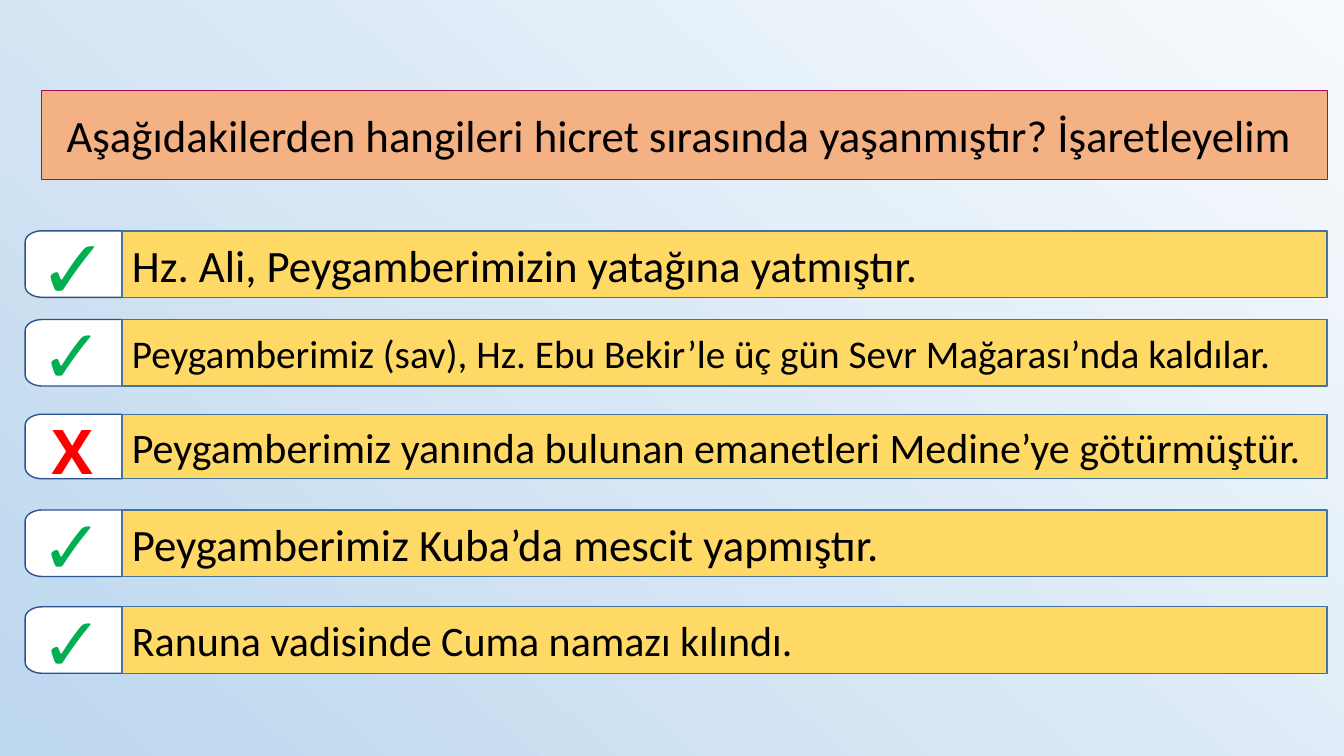
import math

import pptx
import pptx.dml.color
import pptx.enum.shapes
import pptx.enum.text
import pptx.util

Inches = pptx.util.Inches
ANCHOR = pptx.enum.text.MSO_ANCHOR
ALIGN = pptx.enum.text.PP_ALIGN


def paint(shape, fill, line):
    shape.shadow.inherit = False
    shape.fill.solid()
    shape.fill.fore_color.rgb = pptx.dml.color.RGBColor.from_string(fill)
    shape.line.color.rgb = pptx.dml.color.RGBColor.from_string(line)
    shape.line.width = pptx.util.Pt(1)


def write(shape, text, size, font, color, align, anchor, bold=False):
    frame = shape.text_frame
    frame.vertical_anchor = anchor
    para = frame.paragraphs[0]
    para.alignment = align
    span = para.add_run()
    span.text = text
    span.font.size = pptx.util.Pt(size)
    span.font.name = font
    span.font.bold = bold
    span.font.color.rgb = pptx.dml.color.RGBColor.from_string(color)


deck = pptx.Presentation()
deck.slide_width = Inches(13.33)
deck.slide_height = Inches(7.5)
page = deck.slides.add_slide(deck.slide_layouts[5])  # Title Only

backdrop = page.background.fill
backdrop.gradient()
backdrop.gradient_angle = 230
for stop, color in zip(backdrop.gradient_stops, ("F7FAFD", "BDD7EE")):
    stop.color.rgb = pptx.dml.color.RGBColor.from_string(color)

title = page.shapes.title
title.left, title.top = Inches(0.41), Inches(0.9)
title.width, title.height = Inches(12.76), Inches(0.88)
paint(title, "F4B183", "A90C5D")
title.text_frame.word_wrap = True
title.text_frame.auto_size = pptx.enum.text.MSO_AUTO_SIZE.NONE
write(title, "Aşağıdakilerden hangileri hicret sırasında yaşanmıştır? İşaretleyelim ",
      32, "Calibri", "000000", ALIGN.CENTER, ANCHOR.MIDDLE)

# Marks: symbol, size, font, colour, left, rise above the row, width, height, wrap
BIG_TICK = ("✓", 60, "Roboto Slab", "00B050", 0.02, 0.2, 1.43, 1.11, True)
TICK = ("✓", 54, "Roboto Slab", "00B050", 0, 0.16, 1.43, 1.01, True)
CROSS = ("X", 44, "Open Sans", "FF0000", 0.41, 0.06, 0.61, 0.84, False)

# Answers: top, height, text size, text, mark
ANSWERS = [
    (2.29, 0.66, 32, "Hz. Ali, Peygamberimizin yatağına yatmıştır.", BIG_TICK),
    (3.17, 0.66, 28, "Peygamberimiz (sav), Hz. Ebu Bekir’le üç gün Sevr Mağarası’nda kaldılar.", TICK),
    (4.11, 0.64, 30, "Peygamberimiz yanında bulunan emanetleri Medine’ye götürmüştür.", CROSS),
    (5.06, 0.66, 32, "Peygamberimiz Kuba’da mescit yapmıştır.", TICK),
    (6.02, 0.66, 30, "Ranuna vadisinde Cuma namazı kılındı.", TICK),
]
TAB_LEFT, BAR_LEFT, BAR_WIDTH = 0.25, 1.21, 11.95
CORNER_X, CORNER_Y = 0.17, 0.11

for top, height, size, answer, mark in ANSWERS:
    row = page.shapes.add_group_shape()

    # Tab with square right corners and elliptical left corners
    outline = [(BAR_LEFT, top + height)]
    for first_angle, center_y in ((90, top + height - CORNER_Y), (180, top + CORNER_Y)):
        for angle in range(first_angle, first_angle + 91, 10):
            turn = math.radians(angle)
            outline.append((TAB_LEFT + CORNER_X + CORNER_X * math.cos(turn),
                            center_y + CORNER_Y * math.sin(turn)))
    builder = row.shapes.build_freeform(Inches(BAR_LEFT), Inches(top))
    builder.add_line_segments([(Inches(x), Inches(y)) for x, y in outline], close=True)
    paint(builder.convert_to_shape(), "FFFFFF", "2F528F")

    bar = row.shapes.add_shape(pptx.enum.shapes.MSO_SHAPE.RECTANGLE, Inches(BAR_LEFT),
                               Inches(top), Inches(BAR_WIDTH), Inches(height))
    paint(bar, "FFD966", "43739E")
    bar.text_frame.word_wrap = True
    write(bar, answer, size, "Calibri", "000000", ALIGN.LEFT, ANCHOR.MIDDLE)

    symbol, mark_size, font, color, left, rise, mark_width, mark_height, wrap = mark
    box = page.shapes.add_textbox(Inches(left), Inches(top - rise),
                                  Inches(mark_width), Inches(mark_height))
    box.text_frame.word_wrap = wrap
    box.text_frame.auto_size = pptx.enum.text.MSO_AUTO_SIZE.SHAPE_TO_FIT_TEXT
    write(box, symbol, mark_size, font, color, ALIGN.CENTER, ANCHOR.TOP, bold=True)

deck.save("out.pptx")
